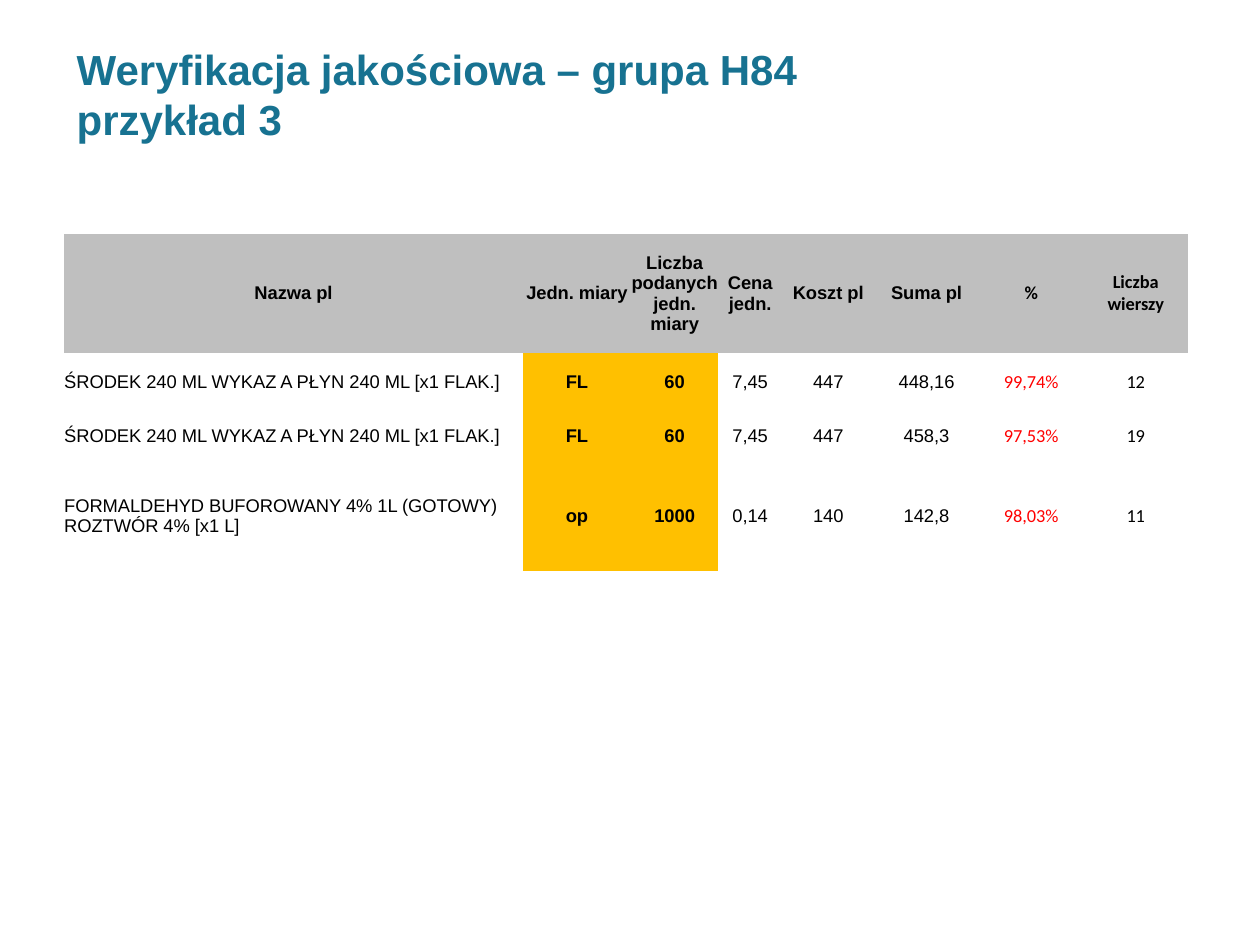
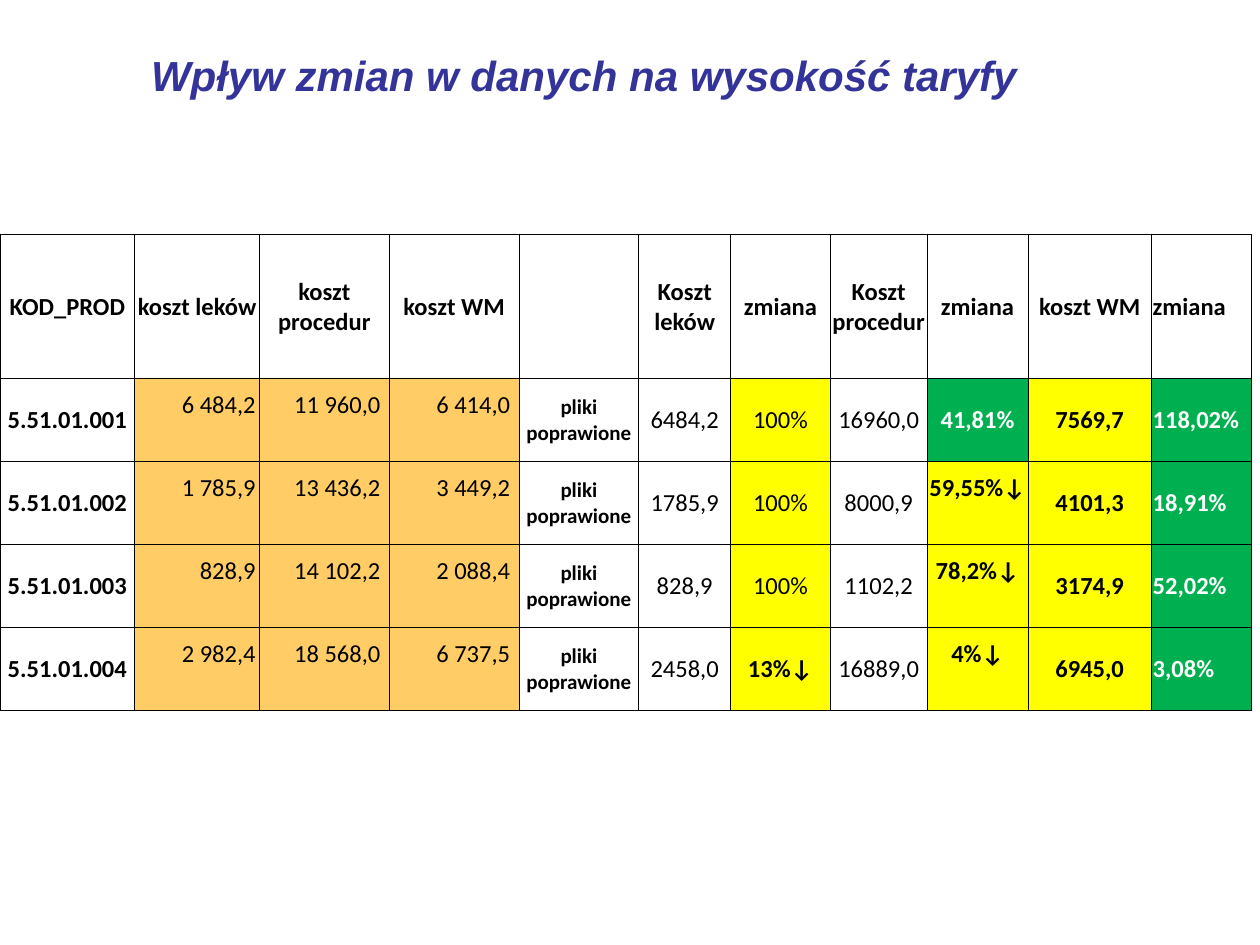
from dataclasses import dataclass, replace

from lxml import etree
from pptx import Presentation
from pptx.dml.color import RGBColor
from pptx.enum.text import MSO_ANCHOR, PP_ALIGN
from pptx.oxml.ns import qn
from pptx.util import Pt

PX = 9144
BLANK_LAYOUT = 6
MIDDLE = MSO_ANCHOR.MIDDLE
LEFT, CENTER, RIGHT = PP_ALIGN.LEFT, PP_ALIGN.CENTER, PP_ALIGN.RIGHT
PLAIN_STYLE = "{2D5ABB26-0587-4C30-8999-92F81FD0307C}"
BORDER_WIDTH = Pt(0.5)
TITLE_SIZE = 24
TITLE_WIDTH, TITLE_HEIGHT = 781, 61

COLORS = {
    "black": "000000",
    "white": "FFFFFF",
    "red": "FF0000",
    "teal": "177291",
    "indigo": "333399",
    "gray": "BFBFBF",
    "amber": "FFC000",
    "peach": "FFCC66",
    "yellow": "FFFF00",
    "green": "00B050",
}

VERIFICATION_COLUMNS = [364, 86, 69, 51, 73, 83, 83, 83]
VERIFICATION_HEIGHTS = [94, 47, 39, 87]
VERIFICATION_ROWS = [
    ["Nazwa pl", "Jedn. miary", "Liczba podanych jedn. miary", "Cena jedn.",
     "Koszt pl", "Suma pl", "%", "Liczba wierszy"],
    ["ŚRODEK 240 ML WYKAZ A PŁYN 240 ML [x1 FLAK.]", "FL", "60", "7,45",
     "447", "448,16", "99,74%", "12"],
    ["ŚRODEK 240 ML WYKAZ A PŁYN 240 ML [x1 FLAK.]", "FL", "60", "7,45",
     "447", "458,3", "97,53%", "19"],
    ["FORMALDEHYD BUFOROWANY 4% 1L (GOTOWY) ROZTWÓR 4% [x1 L]", "op", "1000",
     "0,14", "140", "142,8", "98,03%", "11"],
]

TARIFF_COLUMNS = [107, 99, 103, 103, 95, 73, 79, 77, 80, 98, 79]
TARIFF_HEIGHTS = [114] + [66] * 4
CORRECTED = "pliki poprawione"
TARIFF_ROWS = [
    ["KOD_PROD", "koszt leków", "koszt procedur", "koszt WM", "",
     "Koszt leków", "zmiana", "Koszt procedur", "zmiana", "koszt WM", "zmiana"],
    ["5.51.01.001", "6 484,2", "11 960,0", "6 414,0", CORRECTED,
     "6484,2", "100%", "16960,0", "41,81%", "7569,7", "118,02%"],
    ["5.51.01.002", "1 785,9", "13 436,2", "3 449,2", CORRECTED,
     "1785,9", "100%", "8000,9", "59,55%↓", "4101,3", "18,91%"],
    ["5.51.01.003", "828,9", "14 102,2", "2 088,4", CORRECTED,
     "828,9", "100%", "1102,2", "78,2%↓", "3174,9", "52,02%"],
    ["5.51.01.004", "2 982,4", "18 568,0", "6 737,5", CORRECTED,
     "2458,0", "13%↓", "16889,0", "4%↓", "6945,0", "3,08%"],
]


@dataclass(frozen=True)
class Look:
    """Formatting of one table cell."""
    size: float
    font: str
    color: str = "black"
    bold: bool = False
    fill: str = ""
    align: PP_ALIGN = CENTER
    margins: tuple = (0, 0, 0, 0)


def style_font(font, name, size, color, bold, italic=False):
    """Apply one complete font setting."""
    font.name, font.size = name, Pt(size)
    font.bold, font.italic = bold, italic
    font.color.rgb = RGBColor.from_string(COLORS[color])


def add_title(slide, left, top, text, color, italic=False):
    """Place the slide heading with its top left corner at the given point."""
    heading = slide.shapes.add_textbox(
        left * PX, top * PX, TITLE_WIDTH * PX, TITLE_HEIGHT * PX)
    frame = heading.text_frame
    frame.word_wrap = True
    frame.vertical_anchor = MIDDLE
    frame.text = text
    for run in frame.paragraphs[0].runs:
        style_font(run.font, "Arial", TITLE_SIZE, color, True, italic)


def add_borders(cell):
    """Draw thin black lines on all four sides of a cell."""
    properties = cell._tc.get_or_add_tcPr()
    for side in ("a:lnL", "a:lnR", "a:lnT", "a:lnB"):
        line = etree.SubElement(properties, qn(side), w=str(BORDER_WIDTH))
        solid = etree.SubElement(line, qn("a:solidFill"))
        etree.SubElement(solid, qn("a:srgbClr"), val=COLORS["black"])


def fill_cell(cell, text, look, bordered):
    """Write and format one table cell."""
    left, top, right, bottom = look.margins
    cell.margin_left, cell.margin_top = left * PX, top * PX
    cell.margin_right, cell.margin_bottom = right * PX, bottom * PX
    cell.vertical_anchor = MIDDLE
    if bordered:
        add_borders(cell)
    if look.fill:
        cell.fill.solid()
        cell.fill.fore_color.rgb = RGBColor.from_string(COLORS[look.fill])
    else:
        cell.fill.background()
    cell.text = text
    paragraph = cell.text_frame.paragraphs[0]
    paragraph.alignment = look.align
    for run in paragraph.runs:
        style_font(run.font, look.font, look.size, look.color, look.bold)


def add_grid(slide, left, top, widths, heights, rows, look_for, bordered=False):
    """Build a table whose cell looks come from look_for(row, column, text)."""
    table = slide.shapes.add_table(
        len(heights), len(widths), left * PX, top * PX,
        sum(widths) * PX, sum(heights) * PX).table
    table.first_row = table.horz_banding = False
    table._tbl.tblPr.find(qn("a:tableStyleId")).text = PLAIN_STYLE
    for column, width in zip(table.columns, widths):
        column.width = width * PX
    for row, height in zip(table.rows, heights):
        row.height = height * PX
    for r, texts in enumerate(rows):
        for c, text in enumerate(texts):
            fill_cell(table.cell(r, c), text, look_for(r, c, text), bordered)


def verification_look(row, column, text):
    """Choose the look of a cell in the verification table."""
    base = Look(10.5, "Calibri" if column >= 6 else "Arial")
    if row == 0:
        return replace(base, bold=True, fill="gray")
    if column == 0:
        return replace(base, align=LEFT)
    if column in (1, 2):
        return replace(base, bold=True, fill="amber")
    return replace(base, color="red" if column == 6 else "black")


def tariff_look(row, column, text):
    """Choose the look of a cell in the tariff table."""
    base = Look(14, "Calibri", margins=(1, 1, 1, 0))
    strong = replace(base, bold=True, align=LEFT if column == 10 else CENTER)
    falling = text.endswith("↓")
    if row == 0 or column == 0:
        return strong
    if column in (1, 2, 3):
        right = 3 if column == 1 else 7
        return replace(base, fill="peach", align=RIGHT, margins=(1, 1, right, 24))
    if column == 4:
        return replace(strong, size=12)
    if column == 6:
        return replace(base, bold=falling, fill="yellow")
    if column == 8 and falling:
        return replace(strong, fill="yellow", margins=(1, 1, 1, 24))
    if column == 9:
        return replace(strong, fill="yellow")
    if column in (8, 10):
        return replace(strong, color="white", fill="green")
    return base


def build_verification(slide):
    """Fill the slide on quality verification."""
    add_title(slide, 51, 44,
              "Weryfikacja jakościowa – grupa H84\vprzykład 3", "teal")
    add_grid(slide, 51, 186, VERIFICATION_COLUMNS, VERIFICATION_HEIGHTS,
             VERIFICATION_ROWS, verification_look)


def build_tariff(slide):
    """Fill the slide on the tariff effect of data changes."""
    add_title(slide, 110, 29,
              "Wpływ zmian w danych na wysokość taryfy", "indigo", italic=True)
    add_grid(slide, 0, 186, TARIFF_COLUMNS, TARIFF_HEIGHTS,
             TARIFF_ROWS, tariff_look, bordered=True)


def main():
    """Build and save the presentation."""
    deck = Presentation()
    deck.slide_width, deck.slide_height = 1000 * PX, 750 * PX
    for build in (build_verification, build_tariff):
        build(deck.slides.add_slide(deck.slide_layouts[BLANK_LAYOUT]))
    deck.save("out.pptx")


if __name__ == "__main__":
    main()
